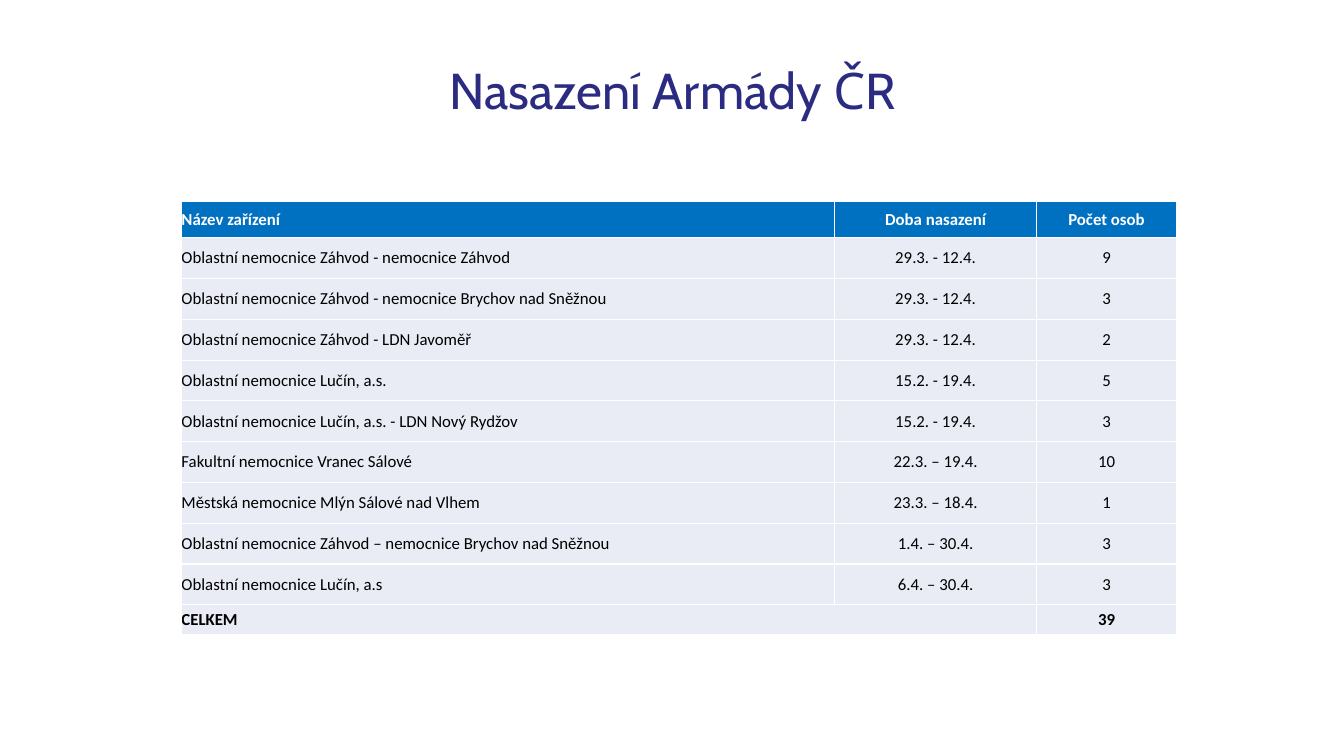
from lxml import etree
from pptx import Presentation
from pptx.dml.color import RGBColor
from pptx.enum.text import MSO_ANCHOR, PP_ALIGN
from pptx.oxml.ns import qn
from pptx.util import Inches, Pt

MIDDLE = MSO_ANCHOR.MIDDLE
LEFT, CENTER = PP_ALIGN.LEFT, PP_ALIGN.CENTER

NAVY = RGBColor(0x2B, 0x2B, 0x82)
BLUE = RGBColor(0x00, 0x70, 0xC0)
PALE = RGBColor(0xE9, 0xEB, 0xF5)
WHITE = RGBColor(0xFF, 0xFF, 0xFF)
BLACK = RGBColor(0x00, 0x00, 0x00)

TITLE_BOX = (0.92, 0.4, 11.5, 1.04)
TABLE_BOX = (1.8, 2, 9.86, 4.3)
COLUMN_WIDTHS = (6.48, 2, 1.39)
HEADER_HEIGHT, TOTAL_HEIGHT = 0.36, 0.3

HEADER = ("Název zařízení", "Doba nasazení", "Počet osob")
DEPLOYMENTS = [
    ("Oblastní nemocnice Záhvod - nemocnice Záhvod", "29.3. - 12.4.", "9"),
    ("Oblastní nemocnice Záhvod - nemocnice Brychov nad Sněžnou", "29.3. - 12.4.", "3"),
    ("Oblastní nemocnice Záhvod - LDN Javoměř", "29.3. - 12.4.", "2"),
    ("Oblastní nemocnice Lučín, a.s.", "15.2. - 19.4.", "5"),
    ("Oblastní nemocnice Lučín, a.s. - LDN Nový Rydžov", "15.2. - 19.4.", "3"),
    ("Fakultní nemocnice Vranec Sálové", "22.3. – 19.4.", "10"),
    ("Městská nemocnice Mlýn Sálové nad Vlhem", "23.3. – 18.4.", "1"),
    ("Oblastní nemocnice Záhvod – nemocnice Brychov nad Sněžnou", "1.4. – 30.4.", "3"),
    ("Oblastní nemocnice Lučín, a.s", "6.4. – 30.4.", "3"),
]
TOTAL = ("CELKEM", "", "39")


def write(para, text, font, size, color, bold=False):
    span = para.add_run()
    span.text = text
    span.font.name = font
    span.font.size = Pt(size)
    span.font.color.rgb = color
    span.font.bold = bold


def add_title(page, box, text):
    title = page.shapes.title
    title.left, title.top, title.width, title.height = map(Inches, box)
    title.text_frame.vertical_anchor = MIDDLE
    para = title.text_frame.paragraphs[0]
    para.alignment = CENTER
    para.line_spacing = 0.9
    write(para, text, "Cabin", 36, NAVY)


def set_borders(cell, color, width):
    """Draw all four edges; they must precede the fill in the cell properties."""
    properties = cell._tc.get_or_add_tcPr()
    for index, edge in enumerate(("a:lnL", "a:lnR", "a:lnT", "a:lnB")):
        line = etree.Element(qn(edge), w=str(Pt(width)))
        fill = etree.SubElement(line, qn("a:solidFill"))
        etree.SubElement(fill, qn("a:srgbClr"), val=str(color))
        properties.insert(index, line)


def format_cell(cell, text, alignment, fill, color, bold):
    cell.margin_left = cell.margin_right = cell.margin_top = cell.margin_bottom = 0
    cell.vertical_anchor = MIDDLE
    cell.fill.solid()
    cell.fill.fore_color.rgb = fill
    set_borders(cell, WHITE, 1)
    if text:
        para = cell.text_frame.paragraphs[0]
        para.alignment = alignment
        write(para, text, "Calibri", 12, color, bold)


def add_deployment_table(page, box):
    """Fill the box; the body rows share the height left by header and total."""
    body_height = (box[3] - HEADER_HEIGHT - TOTAL_HEIGHT) / len(DEPLOYMENTS)
    rows = [(HEADER, HEADER_HEIGHT, BLUE, WHITE, True)]
    rows += [(entry, body_height, PALE, BLACK, False) for entry in DEPLOYMENTS]
    rows.append((TOTAL, TOTAL_HEIGHT, PALE, BLACK, True))

    table = page.shapes.add_table(len(rows), len(HEADER), *map(Inches, box)).table
    for column, width in zip(table.columns, COLUMN_WIDTHS):
        column.width = Inches(width)
    for row, (texts, height, fill, color, bold) in zip(table.rows, rows):
        row.height = Inches(height)
        for cell, text, alignment in zip(row.cells, texts, (LEFT, CENTER, CENTER)):
            format_cell(cell, text, alignment, fill, color, bold)
    last = len(rows) - 1
    table.cell(last, 0).merge(table.cell(last, 1))


def main():
    deck = Presentation()
    deck.slide_width, deck.slide_height = Inches(13.33), Inches(7.5)
    page = deck.slides.add_slide(deck.slide_layouts.get_by_name("Title Only"))
    add_title(page, TITLE_BOX, "Nasazení Armády ČR")
    add_deployment_table(page, TABLE_BOX)
    deck.save("out.pptx")


if __name__ == "__main__":
    main()
